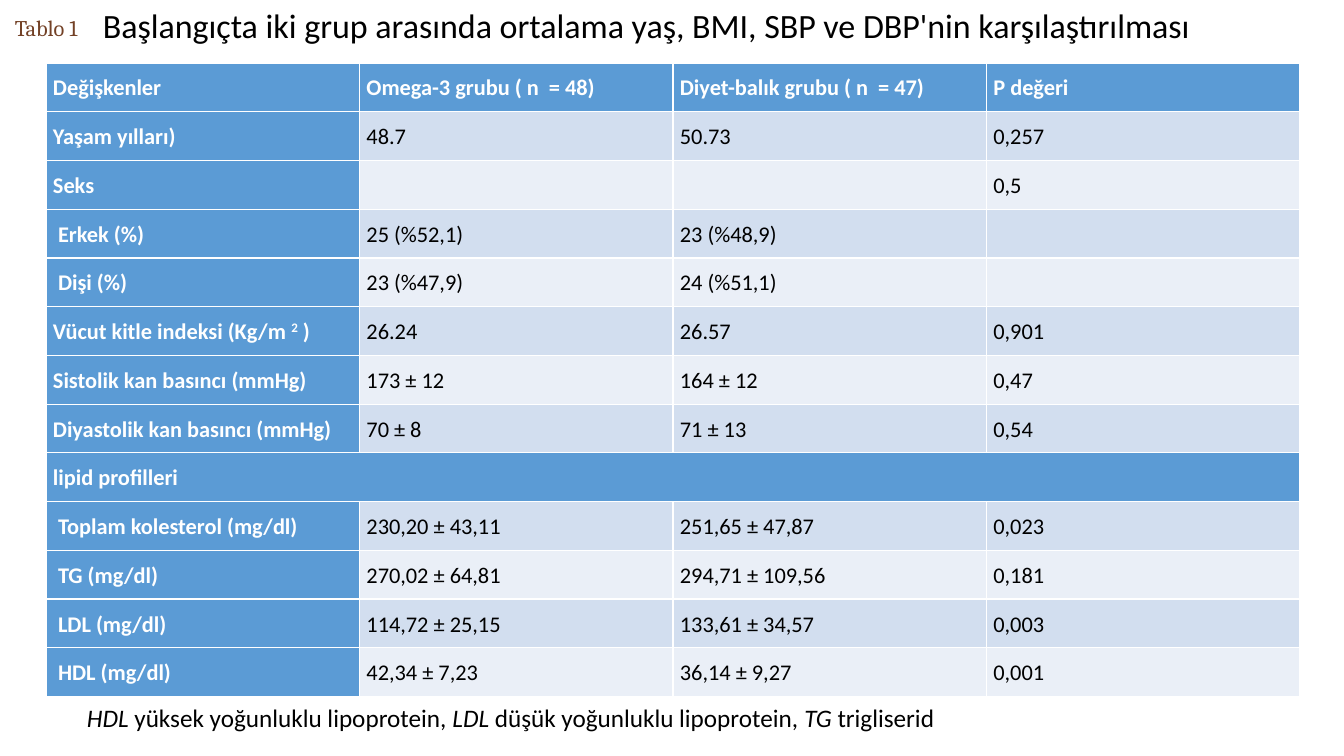
"""Build a slide with a table comparing two groups at baseline."""
import pptx
import pptx.util
import pptx.dml.color
import pptx.enum.text

RGB = pptx.dml.color.RGBColor
WHITE = RGB(0xFF, 0xFF, 0xFF)
BLACK = RGB(0, 0, 0)
BROWN = RGB(0x73, 0x41, 0x26)
BLUE = RGB(0x5B, 0x9B, 0xD5)
BANDS = [RGB(0xEA, 0xEF, 0xF7), RGB(0xD2, 0xDE, 0xEF)]
MIDDLE = pptx.enum.text.MSO_ANCHOR.MIDDLE
TOP = pptx.enum.text.MSO_ANCHOR.TOP
SCALE = 914400 / 100.8


def px(*sizes):
    return [round(size * SCALE) for size in sizes]


def write(para, text, size, color, face="Calibri", bold=False, italic=False):
    run = para.add_run()
    run.text = text
    font = run.font
    font.name, font.size = face, pptx.util.Pt(size)
    font.bold, font.italic = bold, italic
    font.color.rgb = color
    return run


deck = pptx.Presentation()
deck.slide_width, deck.slide_height = px(1344, 756)
slide = deck.slides.add_slide(deck.slide_layouts[6])

title = slide.shapes.add_textbox(*px(93, 9, 1159, 103)).text_frame
title.word_wrap = True
title.vertical_anchor = TOP
title.margin_top = 0
title.paragraphs[0].line_spacing = 0.9
write(title.paragraphs[0], "Başlangıçta iki grup arasında ortalama yaş, BMI, SBP ve DBP'nin karşılaştırılması", 24.3, BLACK)

rows = [
    ["Değişkenler", "Omega-3 grubu ( n  = 48)", "Diyet-balık grubu ( n  = 47)", "P değeri"],
    ["Yaşam yılları)", "48.7", "50.73", "0,257"],
    ["Seks", "", "", "0,5"],
    [" Erkek (%)", "25 (%52,1)", "23 (%48,9)", ""],
    [" Dişi (%)", "23 (%47,9)", "24 (%51,1)", ""],
    ["Vücut kitle indeksi (Kg/m ^2^ )", "26.24", "26.57", "0,901"],
    ["Sistolik kan basıncı (mmHg)", "173 ± 12", "164 ± 12", "0,47"],
    ["Diyastolik kan basıncı (mmHg)", "70 ± 8", "71 ± 13", "0,54"],
    ["lipid profilleri"],
    [" Toplam kolesterol (mg/dl)", "230,20 ± 43,11", "251,65 ± 47,87", "0,023"],
    [" TG (mg/dl)", "270,02 ± 64,81", "294,71 ± 109,56", "0,181"],
    [" LDL (mg/dl)", "114,72 ± 25,15", "133,61 ± 34,57", "0,003"],
    [" HDL (mg/dl)", "42,34 ± 7,23", "36,14 ± 9,27", "0,001"],
]
table = slide.shapes.add_table(len(rows), 4, *px(46, 63, 1254, 634)).table
table.first_col = True
for r, row in enumerate(rows):
    if len(row) == 1:
        table.cell(r, 0).merge(table.cell(r, 3))
    for c, text in enumerate(row):
        cell = table.cell(r, c)
        head = r == 0 or c == 0
        cell.fill.solid()
        cell.fill.fore_color.rgb = BLUE if head else BANDS[r % 2]
        cell.vertical_anchor = MIDDLE
        cell.margin_left, cell.margin_right, cell.margin_top, cell.margin_bottom = px(7, 7, 3, 3)
        if not text:
            continue
        para = cell.text_frame.paragraphs[0]
        para.line_spacing = 1.07
        for i, part in enumerate(text.split("^")):
            run = write(para, part, 16, WHITE if head else BLACK, bold=head)
            if i % 2:
                run.font._element.set("baseline", "30000")

label = slide.shapes.add_textbox(*px(5, 9, 91, 37)).text_frame
label.word_wrap = False
label.vertical_anchor = MIDDLE
write(label.paragraphs[0], "Tablo 1", 16, BROWN, "Cambria")

note = slide.shapes.add_textbox(*px(77, 697, 1239, 72)).text_frame
note.word_wrap = True
terms = ["HDL", " yüksek yoğunluklu lipoprotein, ", "LDL", " düşük yoğunluklu lipoprotein, ", "TG ", "trigliserid"]
for i, term in enumerate(terms):
    write(note.paragraphs[0], term, 18, BLACK, italic=i % 2 == 0)

deck.save("out.pptx")
